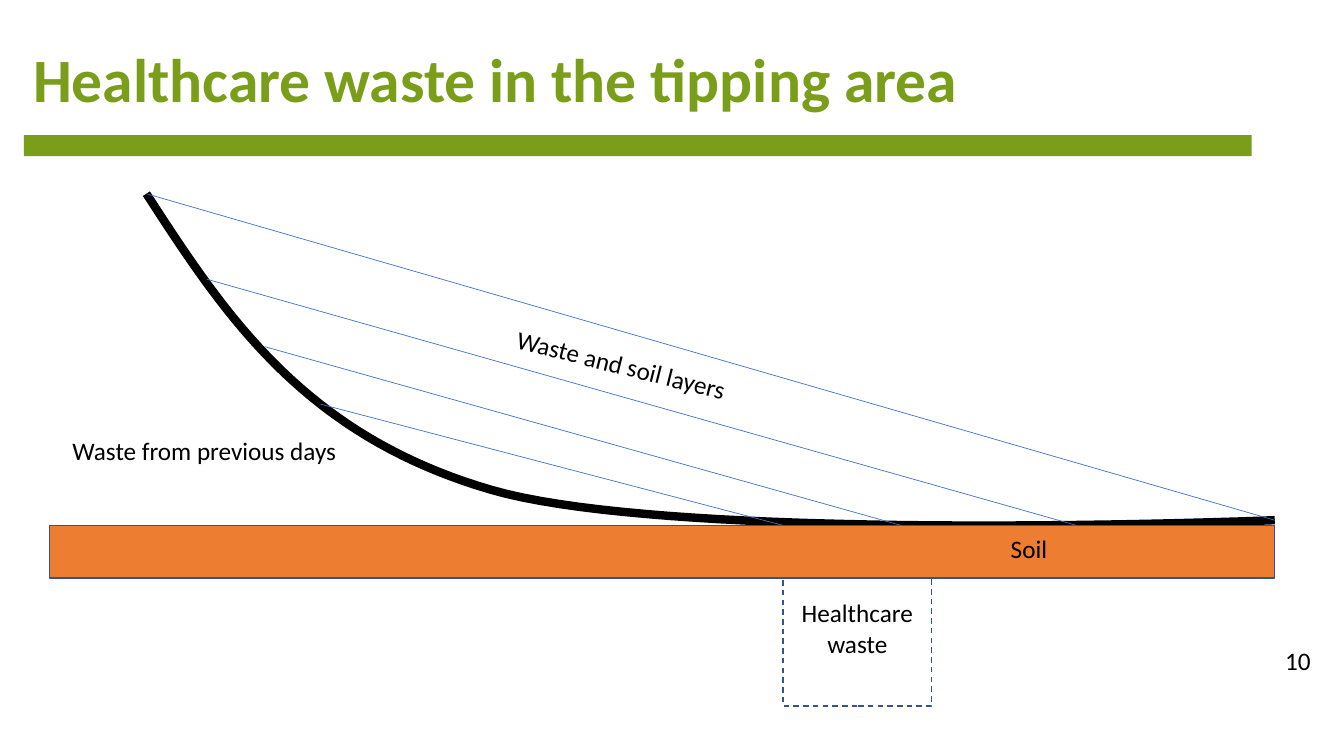
from pptx import Presentation
from pptx.dml.color import RGBColor
from pptx.enum.dml import MSO_LINE_DASH_STYLE as Dash
from pptx.enum.shapes import MSO_CONNECTOR as Connector, MSO_SHAPE as Shape
from pptx.enum.text import MSO_ANCHOR as Anchor, PP_ALIGN as Align
from pptx.oxml.ns import qn
from pptx.util import Pt
from lxml.etree import SubElement

COLORS = {
    "green": "7A9E1A",
    "soil": "ED7D31",
    "outline": "325491",
    "layer": "4472C4",
    "black": "000000",
}


def add_label(text, left, top, width, height, size=18, color="black", align=Align.LEFT):
    box = page.shapes.add_textbox(Pt(left), Pt(top), Pt(width), Pt(height))
    box.text_frame.word_wrap = True
    para = box.text_frame.paragraphs[0]
    para.text = text
    para.alignment = align
    para.font.name = "Calibri"
    para.font.size = Pt(size)
    para.font.color.rgb = RGBColor.from_string(COLORS[color])
    return box


def add_block(left, top, width, height, fill=None, outline=None):
    block = page.shapes.add_shape(Shape.RECTANGLE, Pt(left), Pt(top), Pt(width), Pt(height))
    block.shadow.inherit = False
    if fill:
        block.fill.solid()
        block.fill.fore_color.rgb = RGBColor.from_string(COLORS[fill])
    else:
        block.fill.background()
    if outline:
        block.line.color.rgb = RGBColor.from_string(COLORS[outline])
        block.line.width = Pt(1)
    else:
        block.line.fill.background()
    return block


deck = Presentation()
deck.slide_width, deck.slide_height = Pt(960), Pt(540)
page = deck.slides.add_slide(deck.slide_layouts[6])

add_block(17, 96.5, 877, 15, fill="green")
title = add_label("Healthcare waste in the tipping area", 16.6, 6.5, 828, 104.4, 44, "green")
title.text_frame.vertical_anchor = Anchor.MIDDLE
title.text_frame.paragraphs[0].font.bold = True
title.text_frame.paragraphs[0].line_spacing = 0.9
add_label("10", 910.8, 457.2, 49.7, 56)

slope_top = (104.6, 138.4)
slope_foot = (910.6, 371.6)
slope_bend = (351.2, 350)
slope_curves = [
    [slope_top, (160.6, 224.7), (216.6, 311), slope_bend],
    [slope_bend, (485.9, 388.9), slope_foot, slope_foot],
]
steps = 40
slope_points = []
for curve in slope_curves:
    for step in range(1, steps + 1):
        t = step / steps
        weights = [(1 - t) ** 3, 3 * t * (1 - t) ** 2, 3 * t**2 * (1 - t), t**3]
        x = sum(weight * point[0] for weight, point in zip(weights, curve))
        y = sum(weight * point[1] for weight, point in zip(weights, curve))
        slope_points.append((Pt(x), Pt(y)))
builder = page.shapes.build_freeform(Pt(slope_top[0]), Pt(slope_top[1]))
builder.add_line_segments(slope_points, close=False)
slope = builder.convert_to_shape()
slope.shadow.inherit = False
slope.fill.background()
slope.line.color.rgb = RGBColor.from_string(COLORS["black"])
slope.line.width = Pt(6)

soil_top = 375.3
pit = add_block(559.4, soil_top, 106, 129, outline="outline")
pit.line.dash_style = Dash.DASH
add_block(35.5, soil_top, 875, 37.5, fill="soil", outline="outline")

layers = [
    ((229, 288.7), (559.4, soil_top)),
    ((189.4, 247.7), (643.7, soil_top)),
    ((147.6, 199.4), (769, soil_top)),
    (slope_top, slope_foot),
]
for start, end in layers:
    layer = page.shapes.add_connector(
        Connector.STRAIGHT, Pt(start[0]), Pt(start[1]), Pt(end[0]), Pt(end[1])
    )
    layer.line.color.rgb = RGBColor.from_string(COLORS["layer"])
    layer.line.width = Pt(0.5)
    SubElement(layer._element.spPr, qn("a:effectLst"))

add_label("Healthcare waste", 559.4, 423.4, 106, 51, align=Align.CENTER)
add_label("Soil", 559.4, 377.3, 351.2, 29, align=Align.CENTER)
add_label("Waste and soil layers", 360, 249.8, 196.6, 29).rotation = 14.1
add_label("Waste from previous days", 44.6, 307.4, 231.8, 29)

deck.save("out.pptx")
